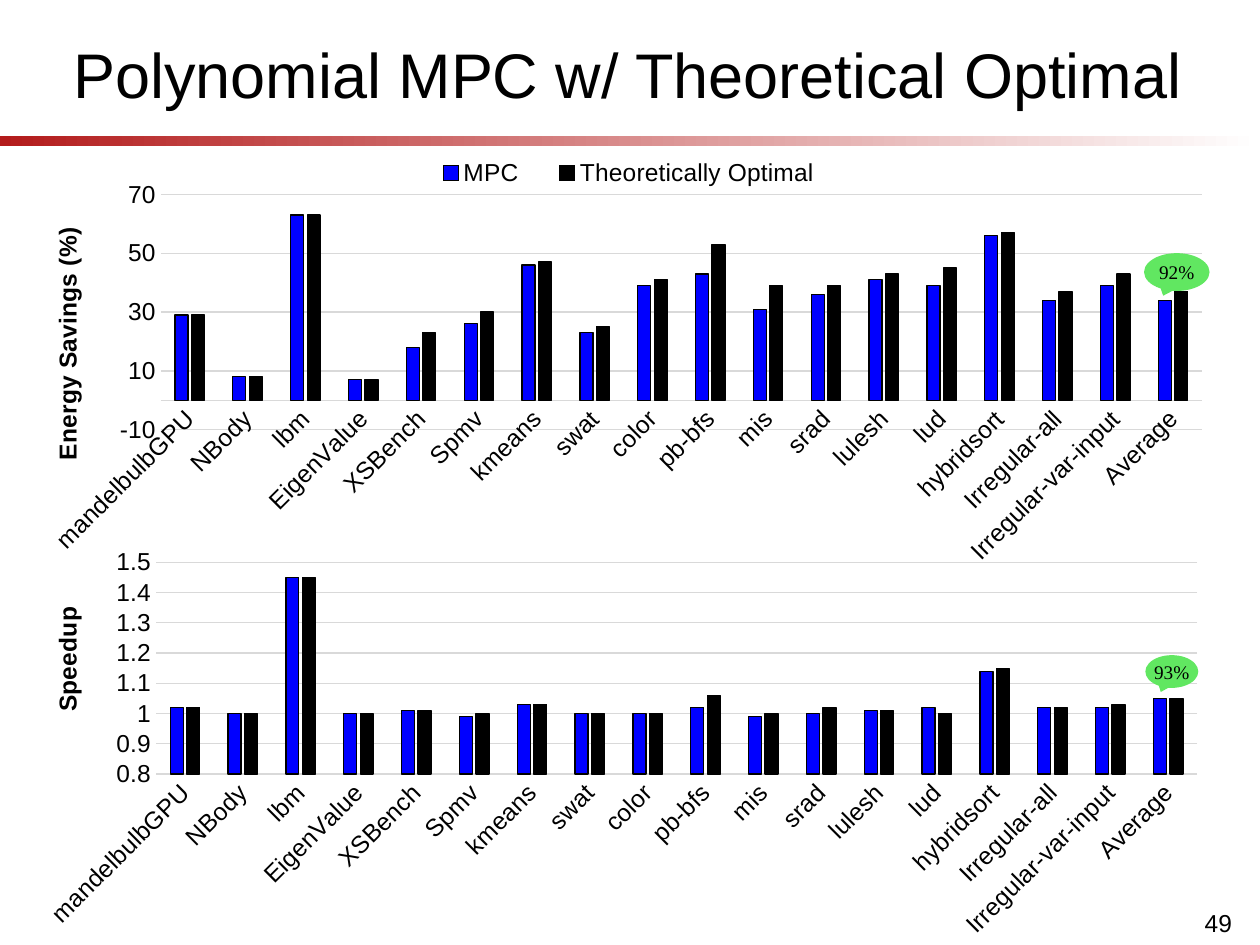
from pptx import Presentation
from pptx.chart.data import CategoryChartData as ChartData
from pptx.dml.color import RGBColor as RGB
from pptx.enum.chart import XL_CHART_TYPE as Kind, XL_LEGEND_POSITION as Side, XL_TICK_MARK as Tick
from pptx.enum.shapes import MSO_SHAPE as Geo
from pptx.enum.text import MSO_ANCHOR as Anchor, PP_ALIGN as Align
from pptx.oxml.ns import qn
from pptx.util import Pt
from lxml import etree

SCALE = 9144
SANS, SERIF = "Arial", "Times New Roman"
BLUE, BLACK, GRID, GREEN = "0000FF", "000000", "D9D9D9", "61E761"
NAMES = ["mandelbulbGPU", "NBody", "lbm", "EigenValue", "XSBench", "Spmv", "kmeans",
         "swat", "color", "pb-bfs", "mis", "srad", "lulesh", "lud", "hybridsort",
         "Irregular-all", "Irregular-var-input", "Average"]
ENERGY = {
    "MPC": [29, 8, 63, 7, 18, 26, 46, 23, 39, 43, 31, 36, 41, 39, 56, 34, 39, 34],
    "Theoretically Optimal":
        [29, 8, 63, 7, 23, 30, 47, 25, 41, 53, 39, 39, 43, 45, 57, 37, 43, 37],
}
SPEED = {
    "MPC": [1.02, 1, 1.45, 1, 1.01, 0.99, 1.03, 1, 1, 1.02, 0.99, 1, 1.01, 1.02,
            1.14, 1.02, 1.02, 1.05],
    "Theoretically Optimal":
        [1.02, 1, 1.45, 1, 1.01, 1, 1.03, 1, 1, 1.06, 1, 1.02, 1.01, 1,
         1.15, 1.02, 1.03, 1.05],
}


def px(*vals):
    """Turn px lengths into EMU."""
    return [val * SCALE for val in vals]


def color(code):
    """Turn a hex string into a colour."""
    return RGB.from_string(code)


def style(font, size=14, face=SANS, bold=False, tint=BLACK):
    """Format a font."""
    font.size, font.name, font.bold = Pt(size), face, bold
    font.color.rgb = color(tint)


def write(frame, text, wrap=True, anchor=Anchor.MIDDLE, **form):
    """Fill a text frame with one centred line."""
    frame.word_wrap, frame.vertical_anchor = wrap, anchor
    line = frame.paragraphs[0]
    line.alignment = Align.CENTER
    run = line.add_run()
    run.text = text
    style(run.font, **form)


def label(slide, box, text, **form):
    """Add a text box."""
    write(slide.shapes.add_textbox(*px(*box)).text_frame, text, **form)


def shape(slide, geo, box):
    """Add a preset shape with no line or shadow."""
    item = slide.shapes.add_shape(geo, *px(*box))
    item.shadow.inherit = False
    item.line.fill.background()
    return item


def head(slide, box):
    """Place the title and the fading rule beneath it."""
    left, top, wide, high = box
    rule = shape(slide, Geo.RECTANGLE, (left, top + high - 8, wide, 8))
    rule.fill.gradient()
    rule.fill.gradient_angle = 0
    for stop, code in zip(rule.fill.gradient_stops, ("B31B1B", "FFFFFF")):
        stop.color.rgb = color(code)
    label(slide, (left + 25, top + 25, wide - 54, 67),
          "Polynomial MPC w/ Theoretical Optimal", size=36)


def place(node, spots, inner=False):
    """Give a chart part a manual layout in fractions of the chart."""
    lay = node.find(qn("c:layout"))
    if lay is None:
        lay = etree.Element(qn("c:layout"))
        lead = [kid for kid in node if kid.tag in (qn("c:tx"), qn("c:legendPos"))]
        node.insert(len(lead), lay)
    man = etree.SubElement(lay, qn("c:manualLayout"))
    rules = [("layoutTarget", "inner")] if inner else []
    rules += [("xMode", "edge"), ("yMode", "edge"), *zip("xywh", spots)]
    for key, val in rules:
        etree.SubElement(man, qn("c:" + key)).set("val", str(val))


def turn(body, deg):
    """Rotate chart text."""
    body.set("rot", str(deg * 60000))
    body.set("vert", "horz")


def axes(chart, title, spot, low, top, step):
    """Format both axes and the value title."""
    cat, val = chart.category_axis, chart.value_axis
    for axis in (cat, val):
        axis.major_tick_mark = axis.minor_tick_mark = Tick.NONE
        style(axis.tick_labels.font)
    cat.format.line.color.rgb = color(GRID)
    cat.format.line.width = Pt(0.75)
    turn(cat.tick_labels.font._element.getparent().getparent().getparent()
         .find(qn("a:bodyPr")), -45)
    val.minimum_scale, val.maximum_scale, val.major_unit = low, top, step
    val.format.line.fill.background()
    grid = val.major_gridlines.format.line
    grid.color.rgb, grid.width = color(GRID), Pt(0.75)
    val.tick_labels.number_format = "General"
    val.tick_labels.number_format_is_linked = False
    frame = val.axis_title.text_frame
    run = frame.paragraphs[0].add_run()
    run.text = title
    style(run.font, bold=True)
    turn(frame._txBody.find(qn("a:bodyPr")), -90)
    place(val.axis_title._element, spot)


def bars(slide, box, rows, plot, legend=None, **scale):
    """Add a clustered column chart."""
    data = ChartData()
    data.categories = NAMES
    for name, vals in rows.items():
        data.add_series(name, vals)
    chart = slide.shapes.add_chart(Kind.COLUMN_CLUSTERED, *px(*box), data).chart
    style(chart.font)
    chart.has_title = False
    chart.has_legend = bool(legend)
    if legend:
        chart.legend.position = Side.TOP
        chart.legend.include_in_layout = False
        style(chart.legend.font)
        place(chart.legend._element, legend)
    group = chart.plots[0]
    group.gap_width, group.overlap, group.vary_by_categories = 219, -27, False
    for item, code in zip(group.series, (BLUE, BLACK)):
        item.format.fill.solid()
        item.format.fill.fore_color.rgb = color(code)
        item.format.line.color.rgb = color(BLACK)
        item.format.line.width = Pt(0.75)
    axes(chart, **scale)
    place(chart._chartSpace.chart.plotArea, plot, inner=True)


def callout(slide, box, text):
    """Add a green speech bubble."""
    item = shape(slide, Geo.OVAL_CALLOUT, box)
    item.fill.solid()
    item.fill.fore_color.rgb = color(GREEN)
    write(item.text_frame, text, wrap=False, size=11, face=SERIF)


def main():
    """Build the slide."""
    deck = Presentation()
    deck.slide_width, deck.slide_height = px(1000, 750)
    slide = deck.slides.add_slide(deck.slide_layouts[6])
    head(slide, (0, 0, 1000, 116))
    label(slide, (934, 716, 66, 34), "49", anchor=Anchor.TOP)
    bars(slide, (18, 116, 962, 359), ENERGY, (0.114, 0.107, 0.859, 0.52),
         legend=(0.32, 0.02, 0.36, 0.08), title="Energy Savings (%)",
         spot=(0.02, 0.17), low=-10, top=70, step=20)
    bars(slide, (18, 410, 962, 340), SPEED, (0.11, 0.107, 0.859, 0.494),
         title="Speedup", spot=(0.02, 0.2), low=0.8, top=1.5, step=0.1)
    callout(slide, (908, 201, 52, 30), "92%")
    callout(slide, (909, 520, 42, 26), "93%")
    deck.save("out.pptx")


if __name__ == "__main__":
    main()
